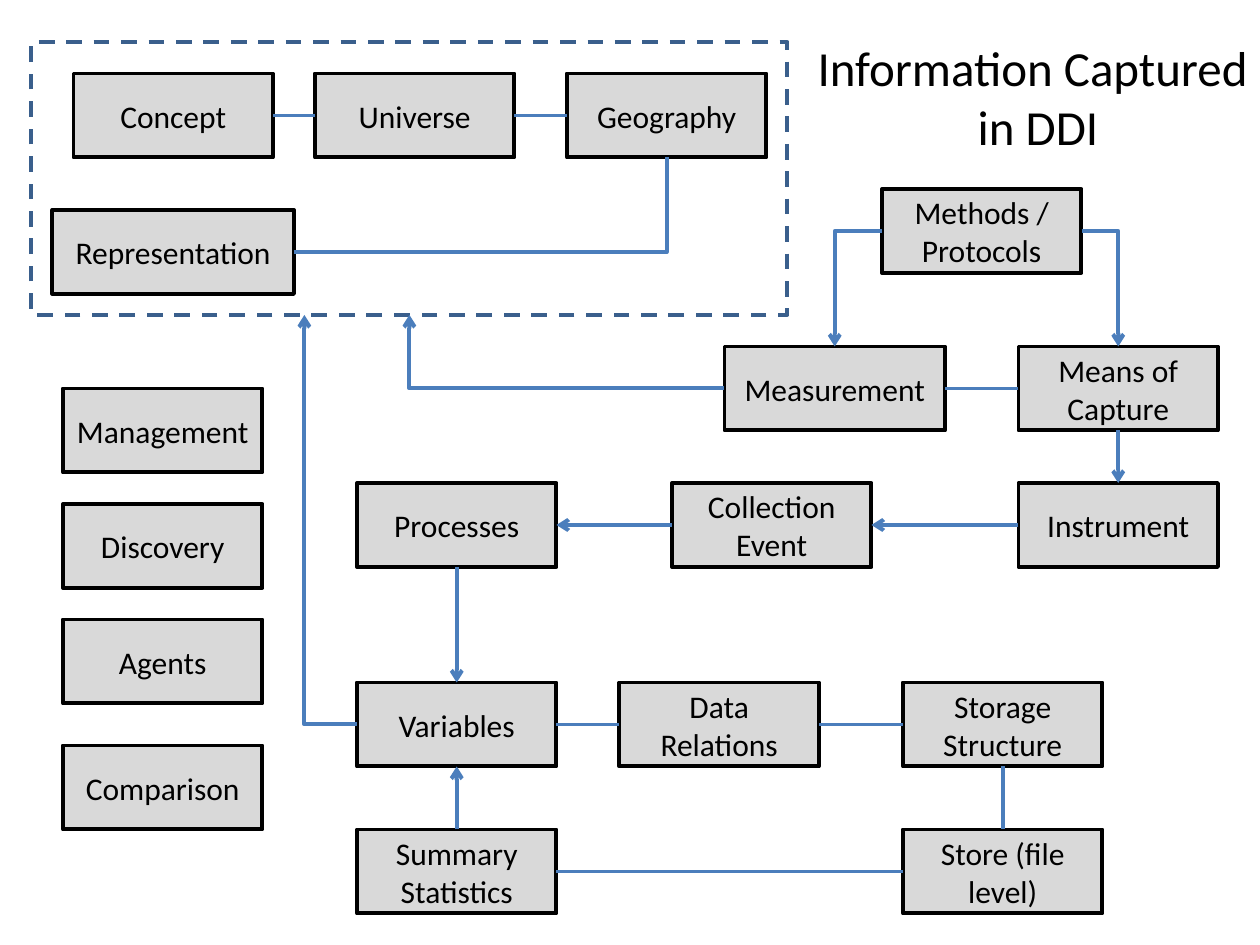
from typing import NamedTuple

from lxml.etree import SubElement
from pptx import Presentation
from pptx.dml.color import RGBColor
from pptx.enum.dml import MSO_LINE as Dash
from pptx.enum.shapes import MSO_CONNECTOR as Conn, MSO_SHAPE as Shape
from pptx.enum.text import MSO_ANCHOR as Anchor, MSO_AUTO_SIZE as Auto, PP_ALIGN as Align
from pptx.oxml.ns import qn
from pptx.util import Pt

BLACK = RGBColor(0x00, 0x00, 0x00)
GREY = RGBColor(0xD9, 0xD9, 0xD9)
BLUE = RGBColor(0x4B, 0x7E, 0xBC)
NAVY = RGBColor(0x3A, 0x5F, 0x8C)
FONT = "Calibri"
WIDE, HIGH, STROKE = 114, 48, 2.25
# Connection sites of a rectangle
TOP, LEFT, FOOT, RIGHT = range(4)


class Box(NamedTuple):
    text: str
    x: float
    y: float
    wide: float = WIDE


class Link(NamedTuple):
    start: str
    out: int
    end: str
    into: int
    arrow: bool = False
    bent: bool = False


class Rise(NamedTuple):
    """An arrow from the left of a box up to the frame."""
    start: str
    x: float


FRAME = (18, 24, 432, 156)
BOXES = [
    # Concepts inside the frame
    Box("Concept", 42, 42),
    Box("Universe", 180, 42),
    Box("Geography", 324, 42),
    Box("Representation", 30, 120, 138),
    # Data capture
    Box("Methods / Protocols", 504, 108),
    Box("Measurement", 414, 198, 126),
    Box("Means of Capture", 582, 198),
    Box("Processes", 204, 276),
    Box("Collection Event", 384, 276),
    Box("Instrument", 582, 276),
    # Data and storage
    Box("Variables", 204, 390),
    Box("Data Relations", 354, 390),
    Box("Storage Structure", 516, 390),
    Box("Summary Statistics", 204, 474),
    Box("Store (file level)", 516, 474),
    # Side column
    Box("Management", 36, 222),
    Box("Discovery", 36, 288),
    Box("Agents", 36, 354),
    Box("Comparison", 36, 426),
]
LINKS = [
    Link("Concept", RIGHT, "Universe", LEFT),
    Link("Universe", RIGHT, "Geography", LEFT),
    Link("Representation", RIGHT, "Geography", FOOT, bent=True),
    Link("Methods / Protocols", LEFT, "Measurement", TOP, True, True),
    Link("Methods / Protocols", RIGHT, "Means of Capture", TOP, True, True),
    Link("Measurement", RIGHT, "Means of Capture", LEFT),
    Link("Means of Capture", FOOT, "Instrument", TOP, True),
    Link("Instrument", LEFT, "Collection Event", RIGHT, True),
    Link("Collection Event", LEFT, "Processes", RIGHT, True),
    Link("Processes", FOOT, "Variables", TOP, True),
    Link("Variables", RIGHT, "Data Relations", LEFT),
    Link("Data Relations", RIGHT, "Storage Structure", LEFT),
    Link("Storage Structure", FOOT, "Store (file level)", TOP),
    Link("Store (file level)", LEFT, "Summary Statistics", RIGHT),
    Link("Summary Statistics", TOP, "Variables", FOOT, True),
]
RISES = [Rise("Measurement", 234), Rise("Variables", 174)]
TITLE = ["Information Captured", " in DDI"]


def add_text(para, text: str, size: float) -> None:
    para.alignment = Align.CENTER
    run = para.add_run()
    run.text = text
    run.font.name, run.font.size = FONT, Pt(size)
    run.font.color.rgb = BLACK


def add_rect(slide, x: float, y: float, wide: float, high: float, ink: RGBColor):
    rect = slide.shapes.add_shape(Shape.RECTANGLE, Pt(x), Pt(y), Pt(wide), Pt(high))
    rect.shadow.inherit = False
    rect.line.color.rgb = ink
    rect.line.width = Pt(STROKE)
    return rect


def add_box(slide, box: Box):
    rect = add_rect(slide, box.x, box.y, box.wide, HIGH, BLACK)
    rect.fill.solid()
    rect.fill.fore_color.rgb = GREY
    frame = rect.text_frame
    frame.word_wrap = True
    frame.vertical_anchor = Anchor.MIDDLE
    add_text(frame.paragraphs[0], box.text, 18)
    return rect


def add_frame(slide) -> None:
    rect = add_rect(slide, *FRAME, NAVY)
    rect.fill.background()
    rect.line.dash_style = Dash.DASH


def site(box: Box, side: int) -> tuple[float, float]:
    mid_x, mid_y = box.x + box.wide / 2, box.y + HIGH / 2
    return {TOP: (mid_x, box.y), LEFT: (box.x, mid_y),
            FOOT: (mid_x, box.y + HIGH), RIGHT: (box.x + box.wide, mid_y)}[side]


def add_line(slide, start: tuple, end: tuple, arrow: bool, bent: bool):
    kind = Conn.ELBOW if bent else Conn.STRAIGHT
    line = slide.shapes.add_connector(kind, *map(Pt, start + end))
    line.line.color.rgb = BLUE
    line.line.width = Pt(STROKE)
    props = line._element.spPr
    if bent:  # one corner: across first, then up or down
        props.find(qn("a:prstGeom")).set("prst", "bentConnector2")
    if arrow:
        SubElement(props.find(qn("a:ln")), qn("a:tailEnd"), type="arrow")
    SubElement(props, qn("a:effectLst"))
    return line


def add_title(slide) -> None:
    area = slide.shapes.add_textbox(Pt(458.6), Pt(18), Pt(262.8), Pt(75))
    frame = area.text_frame
    frame.word_wrap = False
    frame.auto_size = Auto.SHAPE_TO_FIT_TEXT
    for i, text in enumerate(TITLE):
        add_text(frame.add_paragraph() if i else frame.paragraphs[0], text, 28)


def main() -> None:
    deck = Presentation()
    deck.slide_width, deck.slide_height = Pt(720), Pt(540)
    slide = deck.slides.add_slide(deck.slide_layouts[6])

    # Boxes
    by_name = {box.text: box for box in BOXES}
    rects = {box.text: add_box(slide, box) for box in BOXES}

    # Lines between boxes
    for link in LINKS:
        line = add_line(slide, site(by_name[link.start], link.out),
                        site(by_name[link.end], link.into), link.arrow, link.bent)
        line.begin_connect(rects[link.start], link.out)
        line.end_connect(rects[link.end], link.into)

    # Frame and the arrows that reach it
    add_frame(slide)
    for rise in RISES:
        end = (rise.x, FRAME[1] + FRAME[3])
        line = add_line(slide, site(by_name[rise.start], LEFT), end, True, True)
        line.begin_connect(rects[rise.start], LEFT)

    add_title(slide)
    deck.save("out.pptx")


if __name__ == "__main__":
    main()
